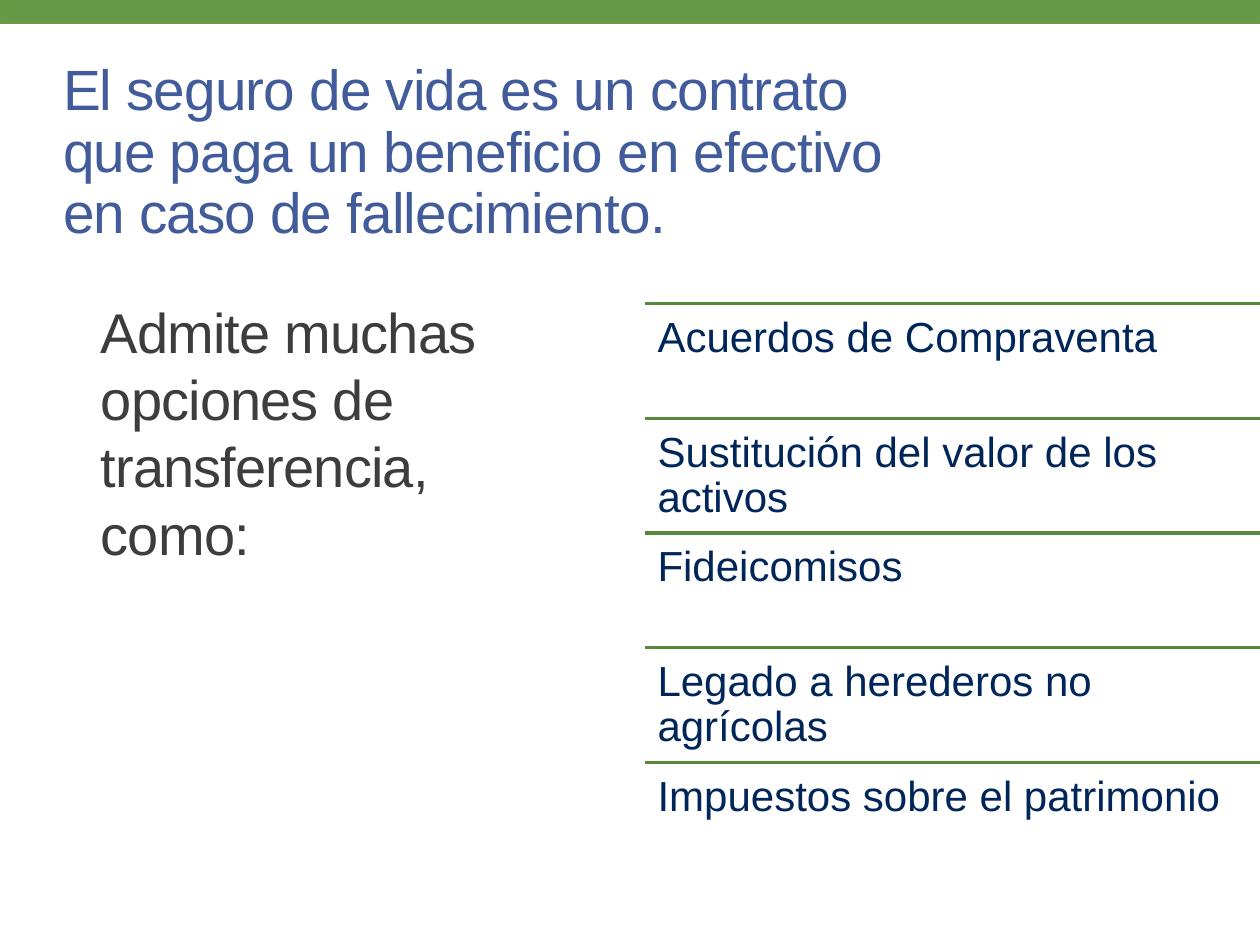
"""Build the slide on life insurance as a transfer tool."""
import dataclasses
import typing

import pptx
import pptx.dml.color
import pptx.enum.shapes
import pptx.enum.text
import pptx.oxml.ns
import pptx.util
from lxml import etree

Inches = pptx.util.Inches
ANCHOR = pptx.enum.text.MSO_ANCHOR


@dataclasses.dataclass(frozen=True)
class Theme:
    """Colours, font and type sizes."""
    font: str = "Arial"
    band: str = "669947"
    band_edge: str = "679A47"
    rule: str = "548A3A"
    title: str = "415B9B"
    body: str = "3C3D3C"
    option: str = "002659"
    title_size: float = 32.4
    body_size: float = 32
    option_size: float = 24
    line_width: float = 2


@dataclasses.dataclass(frozen=True)
class Box:
    """A rectangle in inches."""
    left: float
    top: float
    width: float
    height: float

    def lengths(self) -> dict[str, int]:
        """Return the rectangle as named lengths."""
        return {name: Inches(value) for name, value in dataclasses.asdict(self).items()}


@dataclasses.dataclass(frozen=True)
class TextStyle:
    """How one block of text looks."""
    size: float
    color: str
    inset_x: float
    inset_y: float
    line_spacing: float = 1.0
    tracking: int = 0
    anchor: typing.Any = ANCHOR.TOP


THEME = Theme()
TITLE_STYLE = TextStyle(THEME.title_size, THEME.title, 0, 0, 0.9, -50, ANCHOR.MIDDLE)
BODY_STYLE = TextStyle(THEME.body_size, THEME.body, 0.07, 0.04, tracking=-50)
OPTION_STYLE = TextStyle(THEME.option_size, THEME.option, 0.1, 0.1, 0.9)

TITLE = ("El seguro de vida es un contrato \vque paga un beneficio en efectivo \v"
         "en caso de fallecimiento.")
BODY = "Admite muchas opciones de transferencia, como:"
OPTIONS = (
    "Acuerdos de Compraventa",
    "Sustitución del valor de los activos",
    "Fideicomisos",
    "Legado a herederos no agrícolas",
    "Impuestos sobre el patrimonio",
)
FIRST_OPTION = Box(5.12, 2.41, 4.88, 0.91)


def rgb(color: str) -> pptx.dml.color.RGBColor:
    """Turn a hex string into a colour."""
    return pptx.dml.color.RGBColor.from_string(color)


def apply_format(target: typing.Any, values: dict[str, typing.Any]) -> None:
    """Set each named attribute on the target."""
    for name, value in values.items():
        setattr(target, name, value)


def write_text(shape: typing.Any, text: str, box: Box, style: TextStyle) -> None:
    """Place a shape and fill it with styled text."""
    apply_format(shape, box.lengths())
    frame = shape.text_frame
    apply_format(frame, {
        "text": text,
        "word_wrap": True,
        "auto_size": pptx.enum.text.MSO_AUTO_SIZE.NONE,
        "vertical_anchor": style.anchor,
        "margin_left": Inches(style.inset_x),
        "margin_right": Inches(style.inset_x),
        "margin_top": Inches(style.inset_y),
        "margin_bottom": Inches(style.inset_y),
    })
    paragraph = frame.paragraphs[0]
    apply_format(paragraph, {
        "alignment": pptx.enum.text.PP_ALIGN.LEFT,
        "line_spacing": style.line_spacing,
    })
    for run in paragraph.runs:
        apply_format(run.font, {"name": THEME.font, "size": pptx.util.Pt(style.size)})
        run.font.color.rgb = rgb(style.color)
        if style.tracking:
            run.font._element.set("spc", str(style.tracking))


def add_text(slide: typing.Any, text: str, box: Box, style: TextStyle) -> None:
    """Add a text box."""
    shape = slide.shapes.add_textbox(**box.lengths())
    write_text(shape, text, box, style)


def format_line(line: typing.Any, color: str) -> None:
    """Give a line the theme width and a colour."""
    line.width = pptx.util.Pt(THEME.line_width)
    line.color.rgb = rgb(color)


def add_band(slide: typing.Any, box: Box) -> None:
    """Add the green band along the top edge."""
    band = slide.shapes.add_shape(pptx.enum.shapes.MSO_SHAPE.RECTANGLE, **box.lengths())
    band.shadow.inherit = False
    band.fill.solid()
    band.fill.fore_color.rgb = rgb(THEME.band)
    format_line(band.line, THEME.band_edge)


def add_option(slide: typing.Any, text: str, box: Box) -> None:
    """Add one option with the rule above it."""
    top = Inches(box.top)
    rule = slide.shapes.add_connector(
        pptx.enum.shapes.MSO_CONNECTOR.STRAIGHT,
        Inches(box.left), top, Inches(box.left + box.width), top)
    format_line(rule.line, THEME.rule)
    etree.SubElement(rule._element.spPr, pptx.oxml.ns.qn("a:effectLst"))
    add_text(slide, text, box, OPTION_STYLE)


def main() -> None:
    """Build and save the presentation."""
    presentation = pptx.Presentation()
    apply_format(presentation, {"slide_width": Inches(10), "slide_height": Inches(7.5)})
    slide = presentation.slides.add_slide(presentation.slide_layouts.get_by_name("Title Only"))
    add_band(slide, Box(0, -0.02, 10.01, 0.2))
    write_text(slide.shapes.title, TITLE, Box(0.5, 0.52, 9, 1.4), TITLE_STYLE)
    add_text(slide, BODY, Box(0.73, 2.32, 3.89, 4.65), BODY_STYLE)
    for index, text in enumerate(OPTIONS):
        top = FIRST_OPTION.top + index * FIRST_OPTION.height
        add_option(slide, text, dataclasses.replace(FIRST_OPTION, top=top))
    presentation.save("out.pptx")


if __name__ == "__main__":
    main()
